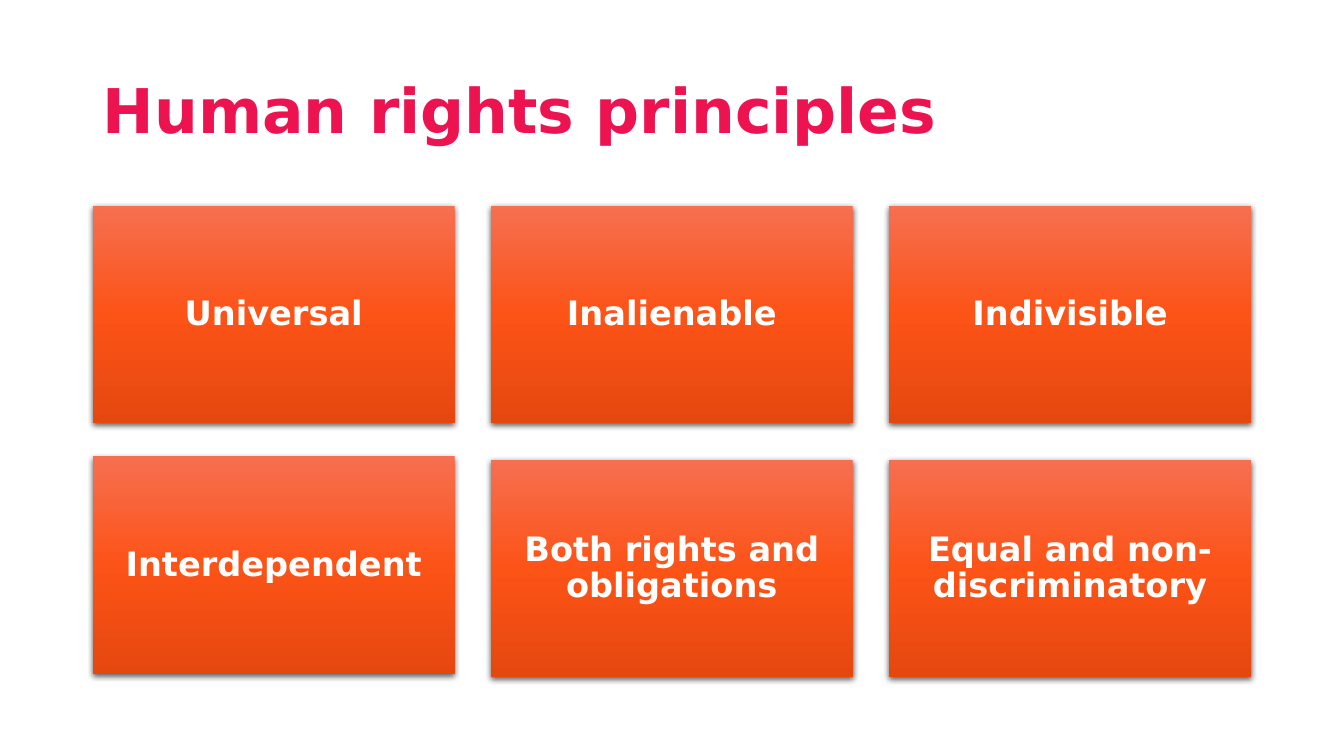
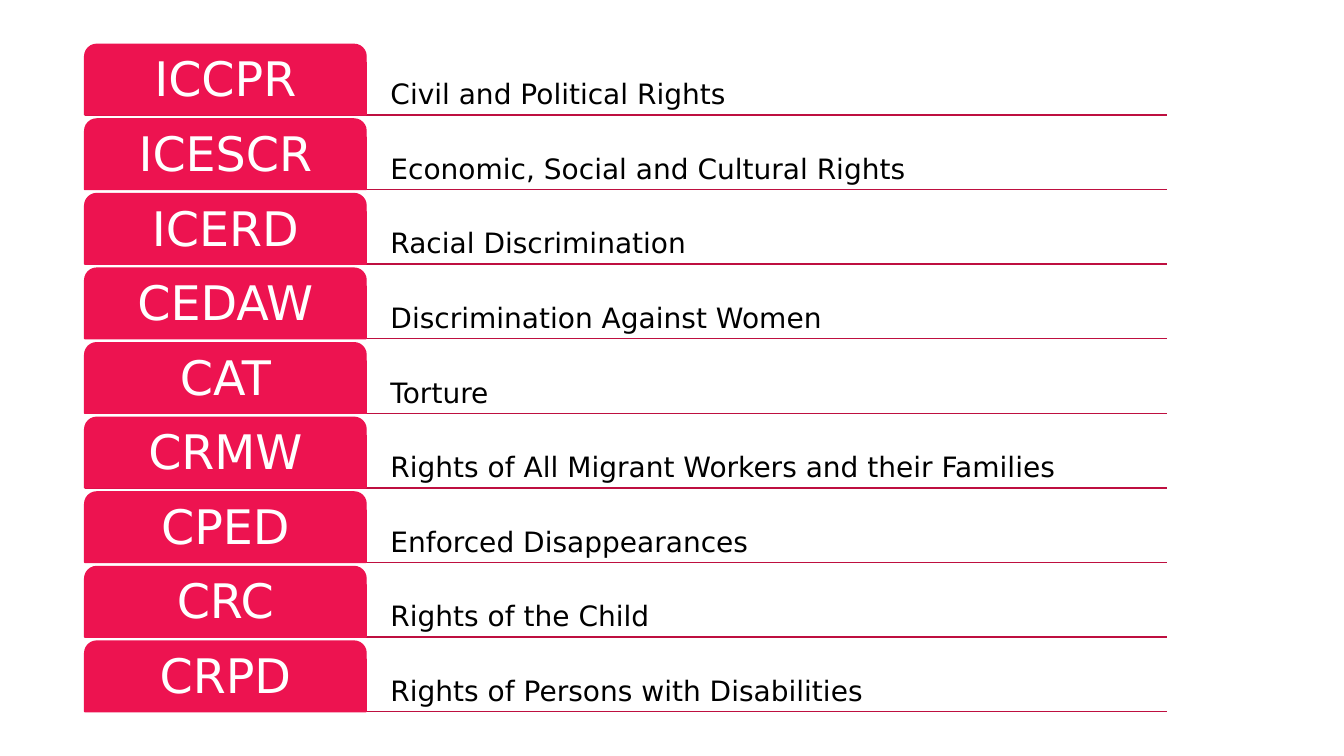
import dataclasses

import pptx
import pptx.dml.color
import pptx.enum.shapes
import pptx.enum.text
import pptx.oxml
import pptx.oxml.ns
import pptx.shapes.autoshape
import pptx.slide
import pptx.text.text
import pptx.util
import copy
from lxml import etree

Pt = pptx.util.Pt
Align = pptx.enum.text.PP_ALIGN
Anchor = pptx.enum.text.MSO_ANCHOR
Kind = pptx.enum.shapes.MSO_SHAPE
qn = pptx.oxml.ns.qn

FONT = "DejaVu Sans"
COLORS = {
    "pink": "ED1350",
    "rule": "BE0F40",
    "light": "F66F50",
    "mid": "FC5317",
    "dark": "E5480F",
    "white": "FFFFFF",
    "black": "000000",
}


@dataclasses.dataclass(frozen=True)
class Box:
    left: float
    top: float
    width: float
    height: float


@dataclasses.dataclass(frozen=True)
class Style:
    size: float
    color: str
    bold: bool = False
    align: Align = Align.CENTER
    anchor: Anchor = Anchor.MIDDLE
    pad: float = 7.2
    indent: int = 0


@dataclasses.dataclass(frozen=True)
class Card:
    text: str
    col: int
    top: float


@dataclasses.dataclass(frozen=True)
class Pact:
    short: str
    topic: str


TITLE = Style(44, "pink", bold=True, align=Align.LEFT)
CARD = Style(24, "white", bold=True)
TAB = Style(34, "white", pad=5)
TOPIC = Style(20, "black", align=Align.LEFT, anchor=Anchor.BOTTOM, pad=3, indent=14.4)

CARDS = [
    Card("Universal", 0, 147),
    Card("Inalienable", 1, 147),
    Card("Indivisible", 2, 147),
    Card("Interdependent", 0, 326),
    Card("Both rights and obligations", 1, 328.4),
    Card("Equal and non-discriminatory", 2, 328.4),
]
PACTS = [
    Pact("ICCPR", "Civil and Political Rights"),
    Pact("ICESCR", "Economic, Social and Cultural Rights"),
    Pact("ICERD", "Racial Discrimination"),
    Pact("CEDAW", "Discrimination Against Women"),
    Pact("CAT", "Torture"),
    Pact("CRMW", "Rights of All Migrant Workers and their Families"),
    Pact("CPED", "Enforced Disappearances"),
    Pact("CRC", "Rights of the Child"),
    Pact("CRPD", "Rights of Persons with Disabilities"),
]


# Shared helpers
def rgb(name: str) -> pptx.dml.color.RGBColor:
    return pptx.dml.color.RGBColor.from_string(COLORS[name])


def place(box: Box) -> list[pptx.util.Length]:
    return [Pt(side) for side in dataclasses.astuple(box)]


def write(frame: pptx.text.text.TextFrame, text: str, style: Style) -> None:
    frame.text = text
    frame.word_wrap = True
    frame.vertical_anchor = style.anchor
    frame.margin_left = frame.margin_right = Pt(style.pad)
    frame.margin_top = frame.margin_bottom = Pt(style.pad)
    for para in frame.paragraphs:
        para.alignment = style.align
        para.line_spacing = 0.9
        if style.indent:
            props = para._p.get_or_add_pPr()
            props.set("marL", str(Pt(style.indent)))
            props.set("indent", "0")
        for run in para.runs:
            run.font.name = FONT
            run.font.size = Pt(style.size)
            run.font.bold = style.bold
            run.font.color.rgb = rgb(style.color)


def add_text(slide: pptx.slide.Slide, box: Box, text: str, style: Style) -> None:
    write(slide.shapes.add_textbox(*place(box)).text_frame, text, style)


def add_block(
    slide: pptx.slide.Slide, kind: Kind, box: Box, text: str, style: Style
) -> pptx.shapes.autoshape.Shape:
    block = slide.shapes.add_shape(kind, *place(box))
    block.shadow.inherit = False
    write(block.text_frame, text, style)
    return block


# Principle cards
def shade(block: pptx.shapes.autoshape.Shape) -> None:
    block.fill.gradient()
    stops = block.element.spPr.find(".//" + qn("a:gsLst"))
    stops.insert(1, copy.deepcopy(stops[0]))
    block.fill.gradient_angle = 270
    for stop, spot, name in zip(
        block.fill.gradient_stops, (0, 0.5, 1), ("light", "mid", "dark")
    ):
        stop.position = spot
        stop.color.rgb = rgb(name)


def drop_shade(block: pptx.shapes.autoshape.Shape) -> None:
    effects = block.element.spPr.find(qn("a:effectLst"))
    outer = etree.SubElement(
        effects, qn("a:outerShdw"), blurRad=str(Pt(4.5)), dist=str(Pt(1.5)),
        dir="5400000", algn="ctr", rotWithShape="0",
    )
    tone = etree.SubElement(outer, qn("a:srgbClr"), val=COLORS["black"])
    etree.SubElement(tone, qn("a:alpha"), val="63000")


def add_card(slide: pptx.slide.Slide, card: Card) -> None:
    box = Box(66.24 + 284.4 * card.col, card.top, 258.5, 155.3)
    block = add_block(slide, Kind.RECTANGLE, box, card.text, CARD)
    block.line.fill.background()
    shade(block)
    drop_shade(block)


# Treaty rows
LEFT, TOP, PITCH, HIGH = 60.5, 31.7, 53.28, 50.4
TAB_W, TOPIC_W = 201, 572


def add_rule(slide: pptx.slide.Slide, row: int) -> None:
    base = Pt(TOP + PITCH * row + HIGH)
    rule = slide.shapes.add_connector(
        pptx.enum.shapes.MSO_CONNECTOR.STRAIGHT,
        Pt(LEFT), base, Pt(LEFT + TAB_W + TOPIC_W), base,
    )
    rule.line.color.rgb = rgb("rule")
    rule.line.width = Pt(1)
    etree.SubElement(rule.element.spPr, qn("a:effectLst"))


def add_pact(slide: pptx.slide.Slide, row: int, pact: Pact) -> None:
    top = TOP + PITCH * row
    add_text(slide, Box(LEFT + TAB_W, top, TOPIC_W, HIGH), pact.topic, TOPIC)
    box = Box(LEFT, top, TAB_W, HIGH)
    tab = add_block(slide, Kind.ROUND_2_SAME_RECTANGLE, box, pact.short, TAB)
    tab.adjustments[0] = 0.17
    tab.fill.solid()
    tab.fill.fore_color.rgb = rgb("pink")
    tab.line.color.rgb = rgb("pink")
    tab.line.width = Pt(1)


def main() -> None:
    deck = pptx.Presentation()
    deck.slide_width, deck.slide_height = Pt(960), Pt(540)
    blank = deck.slide_layouts[6]

    # Slide 1: principles
    slide = deck.slides.add_slide(blank)
    add_text(slide, Box(66.24, 28.8, 828, 104.4), "Human rights principles", TITLE)
    for card in CARDS:
        add_card(slide, card)

    # Slide 2: treaties, with the rules behind the tabs
    slide = deck.slides.add_slide(blank)
    for row in range(len(PACTS)):
        add_rule(slide, row)
    for row, pact in enumerate(PACTS):
        add_pact(slide, row, pact)

    deck.save("out.pptx")


if __name__ == "__main__":
    main()
